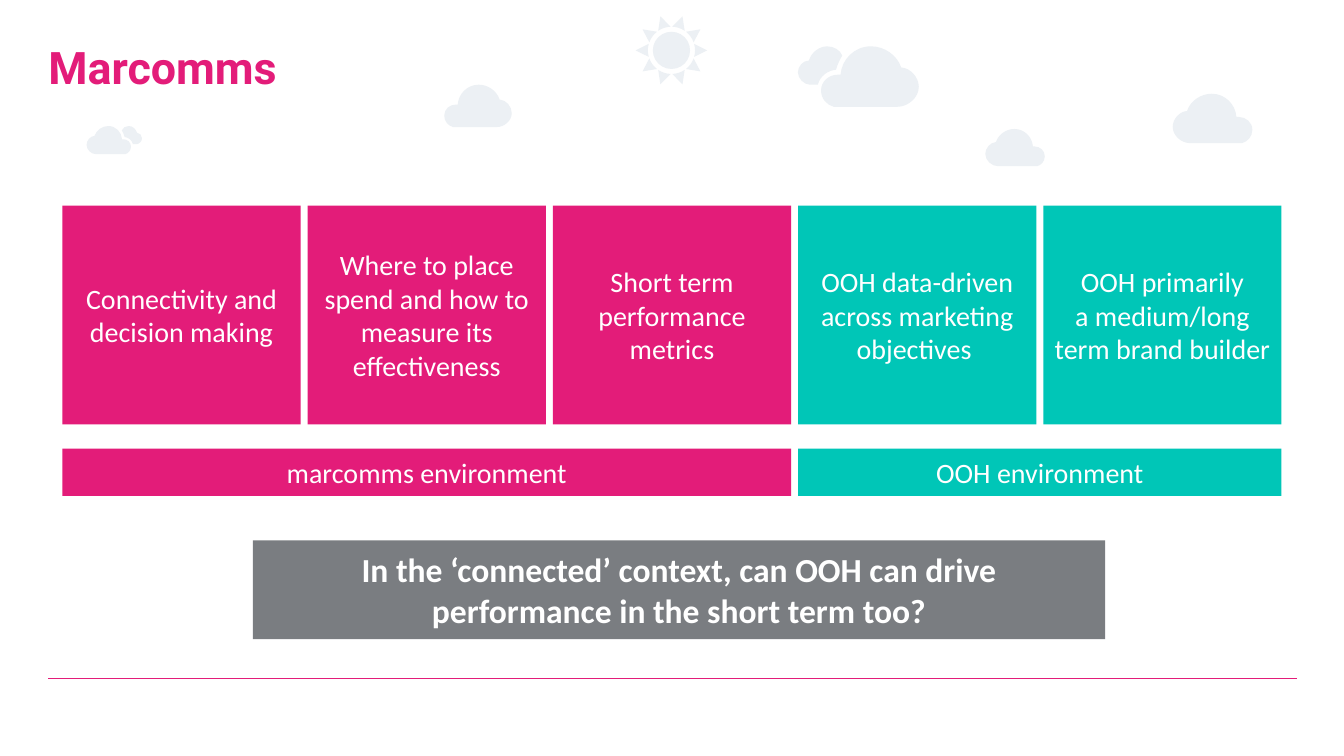
import math
from dataclasses import dataclass

import lxml.etree
import pptx
import pptx.dml.color
import pptx.enum.shapes
import pptx.enum.text
import pptx.oxml.ns
import pptx.util

EMU_PER_PX = 9144


@dataclass(frozen=True)
class Theme:
    """Colours, fonts and type sizes of the slide."""
    pink: str = "E31C79"
    teal: str = "00C6B7"
    grey: str = "7A7D81"
    sky: str = "ECF0F4"
    white: str = "FFFFFF"
    heading_font: str = "Roboto"
    body_font: str = "Calibri"
    title_size: int = 32
    body_size: int = 20
    question_size: int = 24


THEME = Theme()
CARD_GAP = 7
CARD_GROUPS = [
    ("marcomms environment", THEME.pink, [
        "Connectivity and decision making",
        "Where to place spend and how to measure its effectiveness",
        "Short term performance metrics"]),
    ("OOH environment", THEME.teal, [
        "OOH data-driven across marketing objectives ",
        "OOH primarily\va medium/long term brand builder"]),
]

CLOUD = [(82, 35), (78, 15, 65, 0, 51, 0), (34, 0, 21, 22, 20, 47),
         (19, 47, 18, 47, 17, 47), (8, 47, 0, 58, 0, 73), (0, 87, 6, 97, 13, 100),
         (78, 100), (89, 100, 100, 85, 100, 67), (100, 52, 92, 36, 82, 35)]
HIDDEN_CLOUD = [(86, 61), (89, 47, 95, 34, 100, 24), (95, 10, 82, 0, 66, 0),
                (48, 0, 30, 16, 25, 37), (11, 37, 0, 53, 0, 68),
                (0, 84, 14, 100, 27, 100), (45, 100), (50, 77, 68, 63, 86, 61)]
SINGLE_CLOUDS = [((1164, 93, 79, 49), True), ((978, 128, 59, 37), True),
                 ((441, 84, 67, 42), False)]
CLOUD_PAIRS = [((792, 46, 44, 38), (815, 46, 97, 60), False),
               ((121, 125, 20, 18), (86, 125, 44, 28), True)]


def px(length):
    """Turn pixels into EMU."""
    return pptx.util.Emu(round(length * EMU_PER_PX))


def rgb(colour):
    """Turn a hex string into a colour."""
    return pptx.dml.color.RGBColor.from_string(colour)


def paint(shape, colour):
    """Give a shape a flat fill without line or shadow."""
    shape.shadow.inherit = False
    shape.fill.solid()
    shape.fill.fore_color.rgb = rgb(colour)
    shape.line.fill.background()


def write_text(shape, text, size=THEME.body_size, font=THEME.body_font,
               colour=THEME.white, bold=False, align="CENTER", anchor="MIDDLE",
               insets=(8, 4), line_spacing=None):
    """Write one formatted paragraph into a shape."""
    frame = shape.text_frame
    frame.word_wrap = True
    frame.auto_size = pptx.enum.text.MSO_AUTO_SIZE.NONE
    frame.vertical_anchor = pptx.enum.text.MSO_ANCHOR[anchor]
    frame.margin_left = frame.margin_right = px(insets[0])
    frame.margin_top = frame.margin_bottom = px(insets[1])
    paragraph = frame.paragraphs[0]
    paragraph.text = text
    paragraph.alignment = pptx.enum.text.PP_ALIGN[align]
    paragraph.line_spacing = line_spacing
    for run in paragraph.runs:
        run.font.size = pptx.util.Pt(size)
        run.font.name = font
        run.font.bold = bold
        run.font.color.rgb = rgb(colour)


def add_panel(slide, box, text, colour, **text_format):
    """Add a filled rectangle with centred text."""
    shape = slide.shapes.add_shape(
        pptx.enum.shapes.MSO_SHAPE.RECTANGLE, *map(px, box))
    paint(shape, colour)
    write_text(shape, text, **text_format)


def add_outline(shapes, segments):
    """Add a closed outline; each segment lists its points, three for a curve."""
    corners = [tuple(map(px, segment[-1])) for segment in segments]
    builder = shapes.build_freeform(*corners[0])
    builder.add_line_segments(corners[1:], close=True)
    shape = builder.convert_to_shape()
    lines = list(shape._element.iter(pptx.oxml.ns.qn("a:lnTo")))
    for line, segment in zip(lines, segments[1:]):
        if len(segment) == 3:
            curve = lxml.etree.Element(pptx.oxml.ns.qn("a:cubicBezTo"))
            for x, y in segment:
                lxml.etree.SubElement(curve, pptx.oxml.ns.qn("a:pt"),
                                      x=str(px(x) - shape.left), y=str(px(y) - shape.top))
            line.getparent().replace(line, curve)
    paint(shape, THEME.sky)


def add_cloud(shapes, box, outline, mirrored):
    """Fit a percentage outline to a box, mirrored if asked."""
    left, top, width, height = box
    add_outline(shapes, [
        [(left + width * (100 - x if mirrored else x) / 100, top + height * y / 100)
         for x, y in zip(segment[::2], segment[1::2])]
        for segment in outline])


def add_sun(slide, box, ray_count=10, half_angle=16):
    """Draw a disc with a ring of rays in a box."""
    left, top, width, height = box
    centre_x, centre_y = left + width / 2, top + height / 2
    tip_radius, base_radius, disc_radius = width / 2, width * 0.33, width * 0.26
    handle = math.tan(math.radians(half_angle / 2)) * 4 / 3
    handle_angle = half_angle - math.degrees(math.atan(handle))
    handle_radius = base_radius * math.hypot(1, handle)
    shapes = slide.shapes.add_group_shape().shapes

    def around(radius, degrees):
        angle = math.radians(degrees)
        return centre_x + radius * math.cos(angle), centre_y + radius * math.sin(angle)

    for ray in range(ray_count):
        direction = ray * 360 / ray_count
        start = around(base_radius, direction - half_angle)
        add_outline(shapes, [
            [start],
            [around(tip_radius, direction)],
            [around(base_radius, direction + half_angle)],
            [around(handle_radius, direction + handle_angle),
             around(handle_radius, direction - handle_angle), start]])
    disc = shapes.add_shape(
        pptx.enum.shapes.MSO_SHAPE.OVAL, px(centre_x - disc_radius),
        px(centre_y - disc_radius), px(2 * disc_radius), px(2 * disc_radius))
    paint(disc, THEME.sky)


def add_sky(slide):
    """Draw the sun and the clouds."""
    add_sun(slide, (631, 15, 71, 70))
    for box, mirrored in SINGLE_CLOUDS:
        add_cloud(slide.shapes, box, CLOUD, mirrored)
    for back_box, front_box, mirrored in CLOUD_PAIRS:
        shapes = slide.shapes.add_group_shape().shapes
        add_cloud(shapes, back_box, HIDDEN_CLOUD, mirrored)
        add_cloud(shapes, front_box, CLOUD, mirrored)


def add_title(slide, box):
    """Place and format the title placeholder."""
    title = slide.shapes.title
    title.left, title.top, title.width, title.height = map(px, box)
    write_text(title, "Marcomms", size=THEME.title_size, font=THEME.heading_font,
               colour=THEME.pink, bold=True, align="LEFT", anchor="TOP",
               insets=(0, 0), line_spacing=0.9)


def add_cards(slide, box, card_height=217, bar_height=47):
    """Lay out the cards with an environment bar under each group."""
    left, top, width, height = box
    count = sum(len(cards) for _, _, cards in CARD_GROUPS)
    pitch = (width + CARD_GAP) / count
    for environment, colour, cards in CARD_GROUPS:
        bar = (left, top + height - bar_height, pitch * len(cards) - CARD_GAP, bar_height)
        add_panel(slide, bar, environment, colour)
        for text in cards:
            add_panel(slide, (left, top, pitch - CARD_GAP, card_height), text, colour)
            left += pitch


def add_footer_rule(slide, left, top, width):
    """Draw the thin line at the foot of the slide."""
    line = slide.shapes.add_connector(
        pptx.enum.shapes.MSO_CONNECTOR.STRAIGHT, *map(px, (left, top, left + width, top)))
    line.line.color.rgb = rgb(THEME.pink)
    line.line.width = pptx.util.Pt(1)
    lxml.etree.SubElement(line._element.spPr, pptx.oxml.ns.qn("a:effectLst"))


def main():
    """Build and save the slide."""
    presentation = pptx.Presentation()
    presentation.slide_width, presentation.slide_height = px(1334), px(750)
    slide = presentation.slides.add_slide(presentation.slide_layouts[5])
    add_title(slide, (48, 45, 1239, 119))
    add_footer_rule(slide, 48, 673, 1239)
    add_cards(slide, (62, 204, 1210, 288))
    add_sky(slide)
    add_panel(slide, (251, 536, 846, 98),
              "In the ‘connected’ context, can OOH can drive performance in the short term too?",
              THEME.grey, size=THEME.question_size, bold=True, insets=(16, 8))
    presentation.save("out.pptx")


if __name__ == "__main__":
    main()
